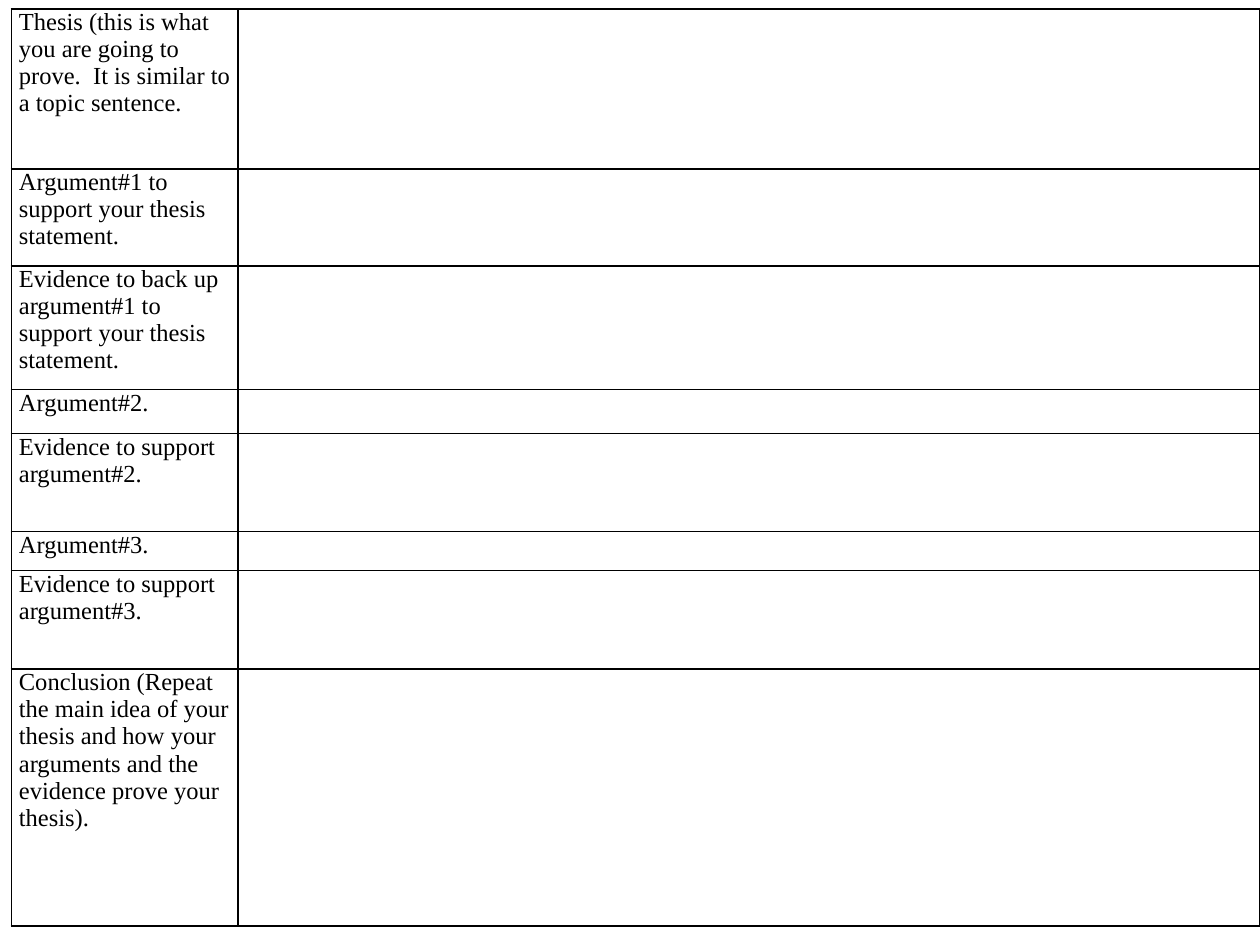
"""Build a one-slide essay planner: prompts on the left, writing space on the right."""
from lxml import etree
from pptx import Presentation
from pptx import util as u
from pptx.dml.color import RGBColor
from pptx.enum import text
from pptx.oxml import ns

BLACK = RGBColor(0, 0, 0)
FONT = "Times New Roman"
LEFT, TOP = 0.09, 0.07
COLUMN_WIDTHS = (1.8, 8.11)
PROMPTS = [
    ("Thesis (this is what you are going to prove.  It is similar to a topic sentence.", 1.27),
    ("Argument#1 to support your thesis statement.", 0.77),
    ("Evidence to back up argument#1 to support your thesis statement.", 0.98),
    ("Argument#2.", 0.35),
    ("Evidence to support argument#2.", 0.78),
    ("Argument#3.", 0.31),
    ("Evidence to support argument#3.", 0.78),
    ("Conclusion (Repeat the main idea of your thesis and how your arguments "
     "and the evidence prove your thesis).", 2.04),
]


def add_borders(cell):
    properties = cell._tc.get_or_add_tcPr()
    for side in ("a:lnL", "a:lnR", "a:lnT", "a:lnB"):
        line = etree.SubElement(properties, ns.qn(side), w=str(u.Pt(1)))
        fill = etree.SubElement(line, ns.qn("a:solidFill"))
        etree.SubElement(fill, ns.qn("a:srgbClr"), val=str(BLACK))


def format_cell(cell):
    cell.margin_left = cell.margin_right = u.Inches(0.06)
    cell.margin_top = cell.margin_bottom = 0
    cell.vertical_anchor = text.MSO_ANCHOR.TOP
    add_borders(cell)
    cell.fill.background()


def write_prompt(cell, prompt):
    run = cell.text_frame.paragraphs[0].add_run()
    run.text = prompt
    run.font.name = FONT
    run.font.size = u.Pt(14)
    run.font.bold = False
    run.font.color.rgb = BLACK


def main():
    presentation = Presentation()
    presentation.slide_width = u.Inches(10)
    presentation.slide_height = u.Inches(7.5)
    slide = presentation.slides.add_slide(presentation.slide_layouts[6])
    height = sum(row_height for _, row_height in PROMPTS)
    table = slide.shapes.add_table(
        len(PROMPTS), len(COLUMN_WIDTHS), u.Inches(LEFT), u.Inches(TOP),
        u.Inches(sum(COLUMN_WIDTHS)), u.Inches(height)).table
    table.first_row = table.horz_banding = False
    for column, width in zip(table.columns, COLUMN_WIDTHS):
        column.width = u.Inches(width)
    for row, (prompt, row_height) in zip(table.rows, PROMPTS):
        row.height = u.Inches(row_height)
        for cell in row.cells:
            format_cell(cell)
        write_prompt(row.cells[0], prompt)
    presentation.save("out.pptx")


if __name__ == "__main__":
    main()
